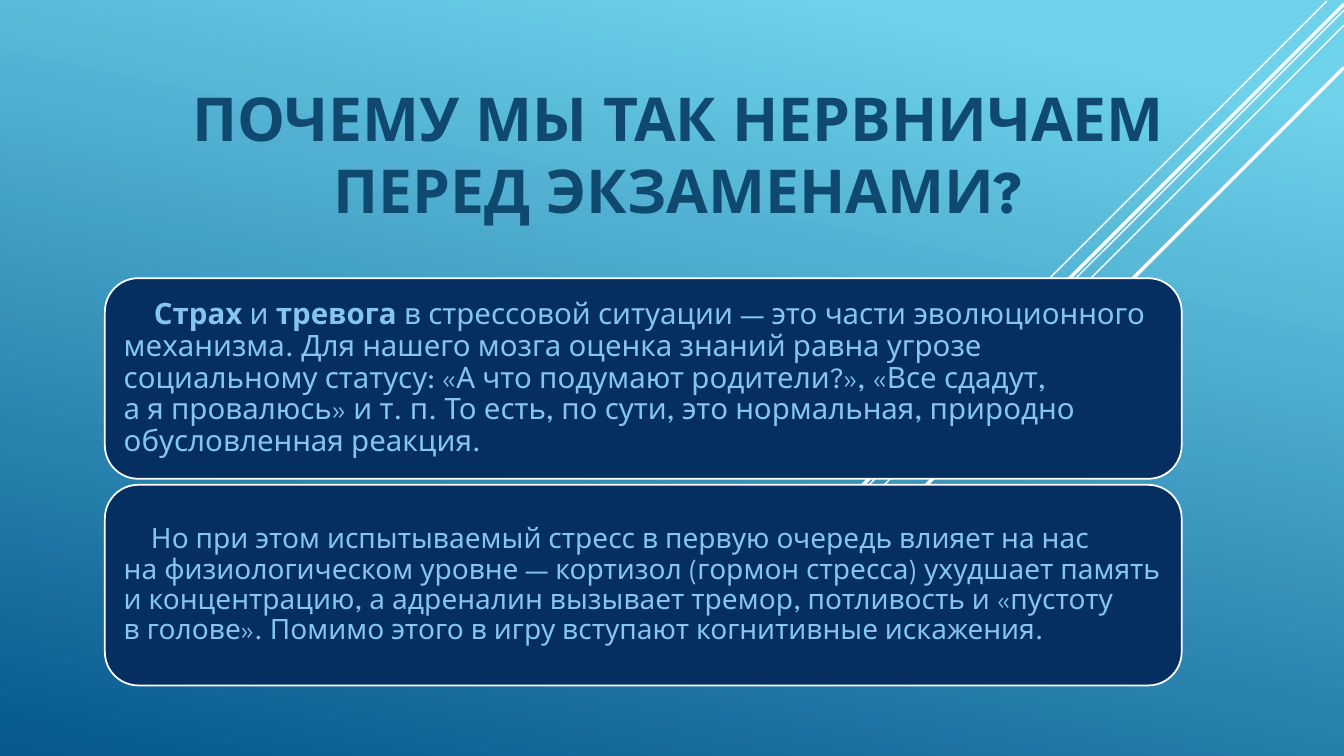
from dataclasses import dataclass

from lxml.etree import SubElement
from pptx import Presentation
from pptx.dml.color import RGBColor
from pptx.enum.shapes import MSO_CONNECTOR, MSO_SHAPE
from pptx.enum.text import MSO_ANCHOR, PP_ALIGN
from pptx.oxml.ns import qn
from pptx.util import Inches, Pt


@dataclass(frozen=True)
class Theme:
    font: str = "League Spartan"
    sky: RGBColor = RGBColor.from_string("6ED2EB")
    sea: RGBColor = RGBColor.from_string("06588E")
    heading: RGBColor = RGBColor.from_string("0F496F")
    panel: RGBColor = RGBColor.from_string("052F61")
    body: RGBColor = RGBColor.from_string("86C5EF")
    outline: RGBColor = RGBColor.from_string("FFFFFF")
    heading_size: float = 43.2
    fear_size: float = 21
    stress_size: float = 20
    body_spacing: float = 0.9


THEME = Theme()
TIE = "~"
NO_BREAK_SPACE = chr(160)

HEADING = "ПОЧЕМУ МЫ ТАК НЕРВНИЧАЕМ ПЕРЕД ЭКЗАМЕНАМИ?"

FEAR = [
    ("Страх", True),
    (" и~", False),
    ("тревога", True),
    (" в~стрессовой ситуации~— это части эволюционного механизма. "
     "Для нашего мозга оценка знаний равна угрозе социальному статусу: "
     "«А~что подумают родители?», «Все сдадут, а~я~провалюсь» и~т.~п. "
     "То~есть, по~сути, это нормальная, природно обусловленная реакция.", False),
]

STRESS = [
    ("Но~при этом испытываемый стресс в~первую очередь влияет на~нас "
     "на~физиологическом уровне~— кортизол (гормон стресса) ухудшает память "
     "и~концентрацию, а~адреналин вызывает тремор, потливость и~«пустоту "
     "в~голове». Помимо этого в~игру вступают когнитивные искажения.", False),
]

RAYS = [
    (13.16, 0.01, 4.17, 1),
    (13.33, 0.1, 6.65, 1),
    (13.33, 0.25, 5.42, 1),
    (13.33, 0.04, 5.3, 2.5),
    (13.33, 0.67, 4.75, 2.5),
]


def paint_background(slide):
    fill = slide.background.fill
    fill.gradient()
    fill.gradient_angle = 258
    stops = ((0.1, THEME.sky), (1, THEME.sea))
    for stop, (position, color) in zip(fill.gradient_stops, stops):
        stop.position = position
        stop.color.rgb = color


def draw_rays(slide):
    for x, y, reach, weight in RAYS:
        ray = slide.shapes.add_connector(
            MSO_CONNECTOR.STRAIGHT,
            Inches(x), Inches(y), Inches(x - reach), Inches(y + reach))
        ray.line.color.rgb = THEME.outline
        ray.line.width = Pt(weight)
        SubElement(ray._element.spPr, qn("a:effectLst"))


def write_runs(paragraph, runs, size, color):
    for words, bold in runs:
        run = paragraph.add_run()
        run.text = words.replace(TIE, NO_BREAK_SPACE)
        run.font.name = THEME.font
        run.font.size = Pt(size)
        run.font.bold = bold
        run.font.color.rgb = color


def add_heading(slide, left, top, width, height):
    heading = slide.shapes.add_textbox(
        Inches(left), Inches(top), Inches(width), Inches(height))
    frame = heading.text_frame
    frame.word_wrap = True
    frame.vertical_anchor = MSO_ANCHOR.BOTTOM
    paragraph = frame.paragraphs[0]
    paragraph.alignment = PP_ALIGN.CENTER
    write_runs(paragraph, [(HEADING, True)], THEME.heading_size, THEME.heading)


def add_panel(slide, left, top, width, height, runs, size, indent):
    panel = slide.shapes.add_shape(
        MSO_SHAPE.ROUNDED_RECTANGLE,
        Inches(left), Inches(top), Inches(width), Inches(height))
    panel.shadow.inherit = False
    panel.fill.solid()
    panel.fill.fore_color.rgb = THEME.panel
    panel.line.color.rgb = THEME.outline
    panel.line.width = Pt(1.25)
    frame = panel.text_frame
    frame.word_wrap = True
    frame.vertical_anchor = MSO_ANCHOR.MIDDLE
    frame.margin_left = frame.margin_right = Inches(0.09)
    frame.margin_top = frame.margin_bottom = Inches(0.09)
    paragraph = frame.paragraphs[0]
    paragraph.alignment = PP_ALIGN.LEFT
    paragraph.line_spacing = THEME.body_spacing
    paragraph._p.get_or_add_pPr().set("indent", str(Inches(indent)))
    write_runs(paragraph, runs, size, THEME.body)


def add_panels(slide, left, top, width, height, gap=0.06):
    panels = ((FEAR, THEME.fear_size, 0.3), (STRESS, THEME.stress_size, 0.27))
    panel_height = (height - gap) / len(panels)
    for row, (runs, size, indent) in enumerate(panels):
        panel_top = top + row * (panel_height + gap)
        add_panel(slide, left, panel_top, width, panel_height, runs, size, indent)


def main():
    deck = Presentation()
    deck.slide_width = Inches(13.33)
    deck.slide_height = Inches(7.5)
    slide = deck.slides.add_slide(deck.slide_layouts[6])
    paint_background(slide)
    draw_rays(slide)
    add_heading(slide, 1.73, 0.55, 10, 1.74)
    add_panels(slide, 1.04, 2.76, 10.68, 4.04)
    deck.save("out.pptx")


if __name__ == "__main__":
    main()
